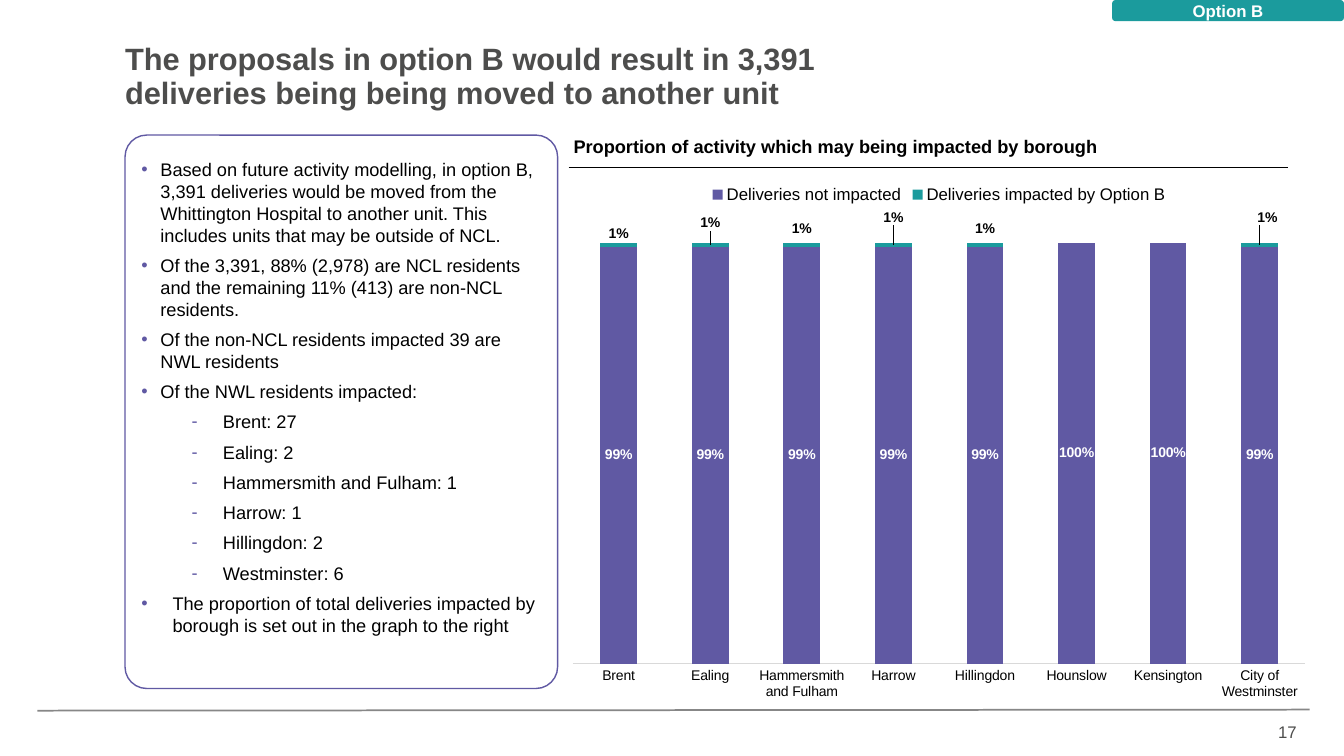
from dataclasses import dataclass
from typing import Any

from lxml import etree
from pptx import Presentation
from pptx import util as u
from pptx.chart.data import CategoryChartData
from pptx.dml.color import RGBColor
from pptx.enum import chart as ch, shapes, text
from pptx.oxml import ns

EMU_PER_PX = 9144  # 100 px to the inch


@dataclass(frozen=True)
class Theme:
    font: str = "Arial"
    purple: str = "6059A3"
    teal: str = "1B9B9D"
    grey: str = "4D4D4C"
    rule: str = "878787"
    axis: str = "D9D9D9"
    black: str = "000000"
    white: str = "FFFFFF"
    title: int = 22
    body: int = 13
    small: int = 12
    label: int = 10


@dataclass(frozen=True)
class Box:
    left: int
    top: int
    width: int
    height: int

    def emu(self) -> list[u.Emu]:
        return [px(n) for n in (self.left, self.top, self.width, self.height)]


@dataclass(frozen=True)
class Bullet:
    mark: str
    margin: int
    hang: int
    level: int = 0


@dataclass(frozen=True)
class Borough:
    name: str
    impacted: float
    label_shift: tuple[float, float] = (0, 0)  # fractions of the chart size


THEME = Theme()
POINT = Bullet("•", 19, 19)
DASH = Bullet("-", 81, 31, 2)
CLOSING = Bullet("•", 31, 31, 1)

FINDINGS = [
    (POINT, "Based on future activity modelling, in option B, 3,391 deliveries would be moved from the "
            "Whittington Hospital to another unit. This includes units that may be outside of NCL."),
    (POINT, "Of the 3,391, 88% (2,978) are NCL residents and the remaining 11% (413) are non-NCL residents."),
    (POINT, "Of the non-NCL residents impacted 39 are NWL residents"),
    (POINT, "Of the NWL residents impacted:"),
    (DASH, "Brent: 27"),
    (DASH, "Ealing: 2"),
    (DASH, "Hammersmith and Fulham: 1"),
    (DASH, "Harrow: 1"),
    (DASH, "Hillingdon: 2"),
    (DASH, "Westminster: 6"),
    (CLOSING, "The proportion of total deliveries impacted by borough is set out in the graph to the right"),
]

BOROUGHS = [
    Borough("Brent", 0.01, (0, -0.02)),
    Borough("Ealing", 0.01, (0, -0.04)),
    Borough("Hammersmith and Fulham", 0.01, (0, -0.03)),
    Borough("Harrow", 0.01, (0, -0.05)),
    Borough("Hillingdon", 0.01, (0, -0.03)),
    Borough("Hounslow", 0),
    Borough("Kensington", 0),
    Borough("City of Westminster", 0.01, (0.01, -0.05)),
]


def px(length: int) -> u.Emu:
    return u.Emu(length * EMU_PER_PX)


def rgb(color: str) -> RGBColor:
    return RGBColor.from_string(color)


def style(font: Any, size: int, color: str, bold: bool = False) -> None:
    font.name, font.size, font.bold = THEME.font, u.Pt(size), bold
    font.color.rgb = rgb(color)


def set_insets(frame: Any, left: int, top: int, right: int, bottom: int) -> None:
    frame.word_wrap = True
    frame.margin_left, frame.margin_top = px(left), px(top)
    frame.margin_right, frame.margin_bottom = px(right), px(bottom)


def add_text(slide: Any, box: Box, words: str, size: int, color: str, bold: bool = False,
             insets: tuple[int, int, int, int] = (10, 5, 10, 5)) -> Any:
    frame = slide.shapes.add_textbox(*box.emu()).text_frame
    set_insets(frame, *insets)
    frame.text = words
    style(frame.paragraphs[0].runs[0].font, size, color, bold)
    return frame.paragraphs[0]


def add_rule(slide: Any, start: tuple[int, int], end: tuple[int, int], color: str, weight: float) -> None:
    rule = slide.shapes.add_connector(shapes.MSO_CONNECTOR.STRAIGHT, *map(px, start + end))
    rule.line.color.rgb, rule.line.width = rgb(color), u.Pt(weight)
    etree.SubElement(rule._element.spPr, ns.qn("a:effectLst"))


def add_rounded(slide: Any, box: Box, fill: str) -> Any:
    panel = slide.shapes.add_shape(shapes.MSO_SHAPE.ROUNDED_RECTANGLE, *box.emu())
    panel.shadow.inherit = False
    panel.fill.solid()
    panel.fill.fore_color.rgb = rgb(fill)
    panel.text_frame.vertical_anchor = text.MSO_ANCHOR.MIDDLE
    return panel


def add_bullet(paragraph: Any, bullet: Bullet) -> None:
    paragraph.level = bullet.level
    props = paragraph._p.get_or_add_pPr()
    props.set("marL", str(px(bullet.margin)))
    props.set("indent", str(-px(bullet.hang)))
    tint = etree.SubElement(props, ns.qn("a:buClr"))
    etree.SubElement(tint, ns.qn("a:srgbClr"), val=THEME.purple)
    etree.SubElement(props, ns.qn("a:buFont"), typeface=THEME.font)
    etree.SubElement(props, ns.qn("a:buChar"), char=bullet.mark)


def manual_layout(**settings: Any) -> Any:
    layout = etree.Element(ns.qn("c:layout"))
    manual = etree.SubElement(layout, ns.qn("c:manualLayout"))
    for name, value in settings.items():
        etree.SubElement(manual, ns.qn(f"c:{name}"), val=str(value))
    return layout


def add_findings(slide: Any) -> None:
    panel = add_rounded(slide, Box(124, 134, 429, 549), THEME.white)
    panel.adjustments[0] = 0.05
    panel.line.color.rgb, panel.line.width = rgb(THEME.purple), u.Pt(1)
    frame = panel.text_frame
    set_insets(frame, 10, 5, 10, 34)
    frame.text = "\n".join(words for _, words in FINDINGS)
    for paragraph, (bullet, _) in zip(frame.paragraphs, FINDINGS):
        paragraph.alignment = text.PP_ALIGN.LEFT
        paragraph.space_after = u.Pt(6)
        add_bullet(paragraph, bullet)
        style(paragraph.runs[0].font, THEME.body, THEME.black)


def add_borough_chart(slide: Any) -> None:
    data = CategoryChartData(number_format="0%")
    data.categories = [b.name for b in BOROUGHS]
    data.add_series("Deliveries not impacted", [1 - b.impacted for b in BOROUGHS])
    data.add_series("Deliveries impacted by Option B", [b.impacted for b in BOROUGHS])
    chart = slide.shapes.add_chart(ch.XL_CHART_TYPE.COLUMN_STACKED_100,
                                   *Box(553, 173, 757, 533).emu(), data).chart
    style(chart.font, THEME.label, THEME.black)
    chart.has_title = False

    # Legend and axes
    chart.has_legend = True
    chart.legend.position = ch.XL_LEGEND_POSITION.TOP
    chart.legend.include_in_layout = False
    style(chart.legend.font, THEME.small, THEME.black)
    scale, names = chart.value_axis, chart.category_axis
    scale.minimum_scale, scale.maximum_scale = 0, 1
    scale.has_major_gridlines = scale.visible = False
    names.major_tick_mark = ch.XL_TICK_MARK.NONE
    names.format.line.color.rgb, names.format.line.width = rgb(THEME.axis), u.Pt(0.75)
    style(names.tick_labels.font, THEME.label, THEME.black)

    # Plot area and bars
    area = chart._chartSpace.chart.plotArea
    for layout in area.findall(ns.qn("c:layout")):
        area.remove(layout)
    area.insert(0, manual_layout(layoutTarget="inner", xMode="edge", yMode="edge",
                                 x=0.02, y=0.127, w=0.96, h=0.784))
    bars = chart.plots[0]
    bars.gap_width, bars.overlap, bars.vary_by_categories = 150, 100, False
    for series, color in zip(bars.series, (THEME.purple, THEME.teal)):
        series.format.fill.solid()
        series.format.fill.fore_color.rgb = rgb(color)
        labels = series.data_labels
        labels.number_format, labels.number_format_is_linked = "0%", False
        style(labels.font, THEME.label, THEME.white, bold=True)

    # Value labels, with those of the impacted share lifted above the bars
    unaffected, impacted = bars.series
    unaffected.data_labels.show_value = True
    impacted.data_labels.show_value = False
    for index, borough in enumerate(BOROUGHS):
        if borough.impacted:
            label = impacted.points[index].data_label
            style(label.font, THEME.label, THEME.black, bold=True)
            x, y = borough.label_shift
            label._dLbl.insert(1, manual_layout(x=x, y=y))


def main() -> None:
    deck = Presentation()
    deck.slide_width, deck.slide_height = px(1333), px(750)
    slide = deck.slides.add_slide(deck.slide_layouts[6])

    # Footer
    add_rule(slide, (37, 705), (1299, 704), THEME.rule, 1.25)
    page = add_text(slide, Box(1210, 711, 86, 30), "17", THEME.small, THEME.grey)
    page.alignment = text.PP_ALIGN.RIGHT

    # Chart with its heading
    add_text(slide, Box(559, 129, 633, 32), "Proportion of activity which may being impacted by borough",
             THEME.body, THEME.black, bold=True)
    add_rule(slide, (564, 166), (1277, 166), THEME.black, 0.5)
    add_borough_chart(slide)

    # Option tab
    tab = add_rounded(slide, Box(1103, 0, 230, 21), THEME.teal)
    tab.line.fill.background()
    set_insets(tab.text_frame, 10, 0, 10, 0)
    tab.text_frame.text = "Option B"
    option = tab.text_frame.paragraphs[0]
    option.alignment = text.PP_ALIGN.CENTER
    style(option.runs[0].font, THEME.small, THEME.white, bold=True)

    # Title and findings
    title = add_text(slide, Box(124, 44, 759, 54), "The proposals in option B would result in 3,391 "
                     "deliveries being being moved to another unit", THEME.title, THEME.grey, True, (0, 0, 0, 0))
    title.line_spacing = 0.9
    add_findings(slide)
    deck.save("out.pptx")


if __name__ == "__main__":
    main()
